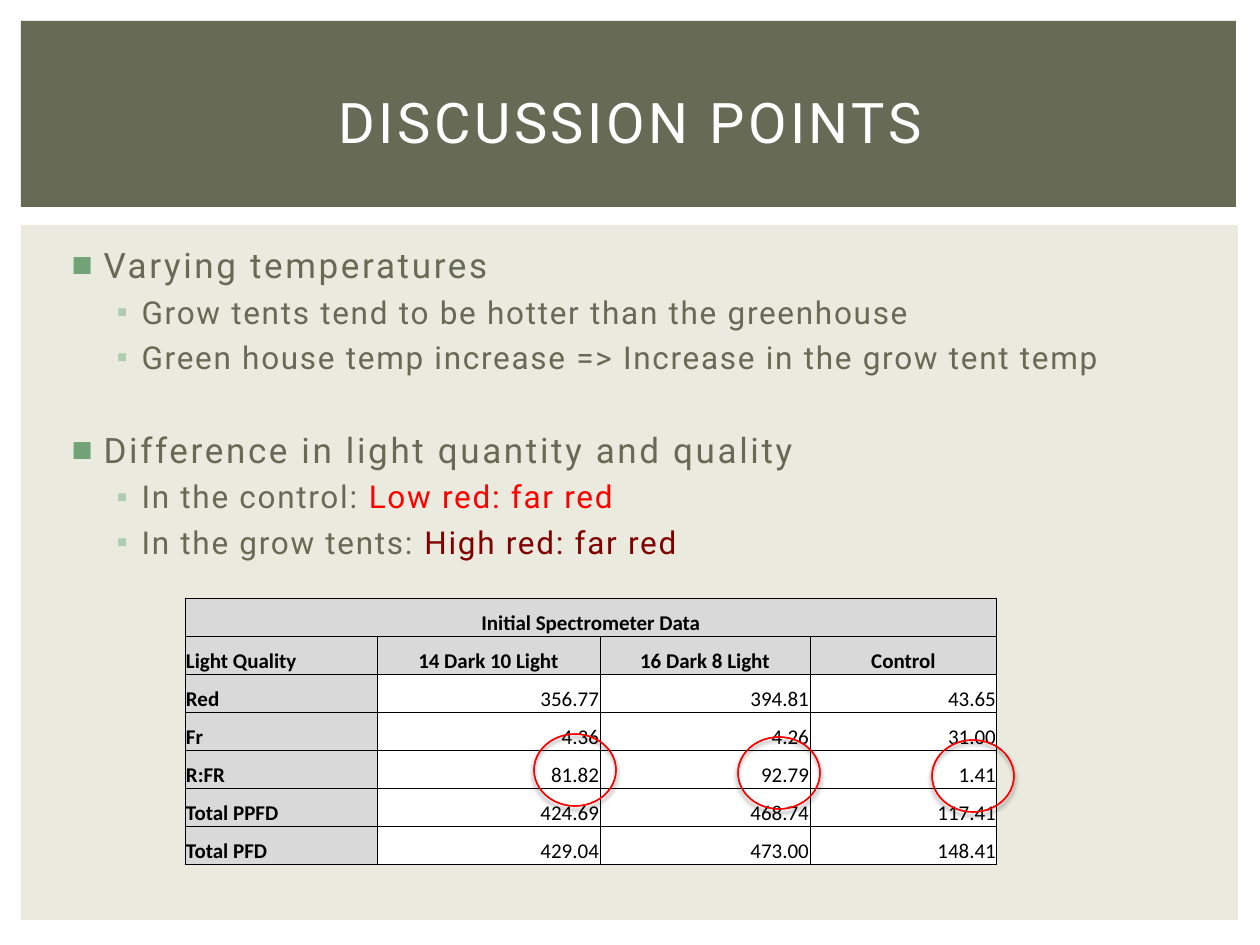
from lxml import etree
from pptx import Presentation
from pptx.dml.color import RGBColor
from pptx.enum.shapes import MSO_SHAPE
from pptx.enum.text import MSO_ANCHOR, MSO_AUTO_SIZE, PP_ALIGN
from pptx.oxml.ns import qn
from pptx.util import Emu, Pt

RECT, DONUT = MSO_SHAPE.RECTANGLE, MSO_SHAPE.DONUT
LEFT, CENTER, RIGHT = PP_ALIGN.LEFT, PP_ALIGN.CENTER, PP_ALIGN.RIGHT
MIDDLE, BOTTOM = MSO_ANCHOR.MIDDLE, MSO_ANCHOR.BOTTOM
NO_FIT = MSO_AUTO_SIZE.NONE

PX_PER_INCH = 126
COLORS = {
    "olive": "676A55", "cream": "EAEBDE", "white": "FFFFFF", "black": "000000",
    "green": "72A376", "mint": "B0CCB0", "red": "FF0000", "maroon": "800000",
    "gray": "D9D9D9",
}
# Per outline level: size, letter spacing, left margin, indent, bullet, its colour
LEVELS = [
    (20, 1.5, 38, -32, "■", "green"),
    (18, 1, 76, -25, "▪", "mint"),
]
# Level, space before in points, runs
POINTS = [
    (0, 1.5, [("Varying temperatures", "olive")]),
    (1, 4.2, [("Grow tents tend to be hotter than the greenhouse", "olive")]),
    (1, 4.2, [("Green house temp increase => Increase in the grow tent temp", "olive")]),
    (0, 30, [("Difference in light quantity and quality", "olive")]),
    (1, 4.2, [("In the control: ", "olive"), ("Low red: far red", "red")]),
    (1, 4.2, [("In the grow tents: ", "olive"), ("High red: far red", "maroon")]),
]
TABLE_TITLE = "Initial Spectrometer Data"
TABLE_ROWS = [
    ["Light Quality", "14 Dark 10 Light", "16 Dark 8 Light", "Control"],
    ["Red", "356.77", "394.81", "43.65"],
    ["Fr", "4.36", "4.26", "31.00"],
    ["R:FR", "81.82", "92.79", "1.41"],
    ["Total PPFD", "424.69", "468.74", "117.41"],
    ["Total PFD", "429.04", "473.00", "148.41"],
]
COL_WIDTHS = [192, 223, 210, 187]
ROW_HEIGHT = 38
RING_OFFSETS = [(349, 136), (553, 139), (747, 142)]


def px(n):
    return Emu(round(n * 914400 / PX_PER_INCH))


def rgb(name):
    return RGBColor.from_string(COLORS[name])


def add_run(p, text, font, size, color, bold=False, spacing=0):
    r = p.add_run()
    r.text = text
    r.font.name, r.font.size, r.font.bold = font, Pt(size), bold
    r.font.color.rgb = rgb(color)
    if spacing:
        r.font._element.set("spc", str(int(spacing * 100)))


def place(sp, x, y, w, h):
    sp.left, sp.top, sp.width, sp.height = px(x), px(y), px(w), px(h)


def add_panel(s, x, y, w, h, color):
    sp = s.shapes.add_shape(RECT, px(x), px(y), px(w), px(h))
    sp.shadow.inherit = False
    sp.fill.solid()
    sp.fill.fore_color.rgb = rgb(color)
    sp.line.fill.background()
    s.shapes.element.insert(2, sp.element)  # behind the placeholders


def add_header(s, x, y, w, h):
    add_panel(s, x, y, w, h, "olive")
    title = s.shapes.title
    place(title, x + 32, y + 28, w - 60, h - 41)
    tf = title.text_frame
    tf.auto_size, tf.vertical_anchor = NO_FIT, MIDDLE
    p = tf.paragraphs[0]
    p.alignment = CENTER
    add_run(p, "DISCUSSION POINTS", "Roboto", 32, "white", spacing=2)


def set_bullet(p, margin, indent, char, color):
    ppr = p._p.get_or_add_pPr()
    ppr.set("marL", str(px(margin)))
    ppr.set("indent", str(px(indent)))
    clr = etree.SubElement(ppr, qn("a:buClr"))
    etree.SubElement(clr, qn("a:srgbClr"), val=COLORS[color])
    etree.SubElement(ppr, qn("a:buChar"), char=char)


def add_body(s, x, y, w, h):
    add_panel(s, x, y, w, h, "cream")
    body = s.placeholders[1]
    place(body, x + 32, y + 12, w - 59, h - 88)
    tf = body.text_frame
    tf.auto_size = NO_FIT
    for i, (level, before, runs) in enumerate(POINTS):
        p = tf.add_paragraph() if i else tf.paragraphs[0]
        size, spacing, *bullet = LEVELS[level]
        p.level, p.space_before = level, Pt(before)
        set_bullet(p, *bullet)
        for text, color in runs:
            add_run(p, text, "Roboto", size, color, spacing=spacing)


def format_cell(cell, text, fill, align, bold):
    cell.margin_left = cell.margin_right = cell.margin_top = px(1)
    cell.margin_bottom = 0
    cell.vertical_anchor = BOTTOM
    tcpr = cell._tc.get_or_add_tcPr()
    for side in ("lnL", "lnR", "lnT", "lnB"):
        ln = etree.SubElement(tcpr, qn(f"a:{side}"), w=str(Pt(0.5)))
        solid = etree.SubElement(ln, qn("a:solidFill"))
        etree.SubElement(solid, qn("a:srgbClr"), val=COLORS["black"])
    cell.fill.solid()
    cell.fill.fore_color.rgb = rgb(fill)
    p = cell.text_frame.paragraphs[0]
    p.alignment = align
    if text:
        add_run(p, text, "Calibri", 12, "black", bold)


def add_ring(s, x, y, w, h):
    sp = s.shapes.add_shape(DONUT, px(x), px(y), px(w), px(h))
    sp.adjustments[0] = 0
    sp.fill.solid()
    sp.fill.fore_color.rgb = rgb("green")
    sp.line.color.rgb = rgb("red")
    sp.line.width = Pt(0.79)
    # Soft shadow straight below
    sp.shadow.inherit = False
    effects = sp.element.spPr.find(qn("a:effectLst"))
    shadow = etree.SubElement(effects, qn("a:outerShdw"), blurRad=str(Pt(2.5)),
                              dist=str(Pt(2)), dir="5400000", rotWithShape="0")
    clr = etree.SubElement(shadow, qn("a:srgbClr"), val=COLORS["black"])
    etree.SubElement(clr, qn("a:alpha"), val="50000")


def add_spectrometer_table(s, x, y):
    rows = [[TABLE_TITLE, "", "", ""]] + TABLE_ROWS
    frame = s.shapes.add_table(len(rows), len(COL_WIDTHS), px(x), px(y),
                               px(sum(COL_WIDTHS)), px(ROW_HEIGHT * len(rows)))
    table = frame.table
    table.first_row = table.horz_banding = False
    for col, width in zip(table.columns, COL_WIDTHS):
        col.width = px(width)
    for i, texts in enumerate(rows):
        table.rows[i].height = px(ROW_HEIGHT)
        for j, text in enumerate(texts):
            heading = i < 2 or j == 0
            if i == 0 or (i == 1 and j > 0):
                align = CENTER
            else:
                align = LEFT if j == 0 else RIGHT
            format_cell(table.cell(i, j), text, "gray" if heading else "white",
                        align, heading)
    table.cell(0, 0).merge(table.cell(0, len(COL_WIDTHS) - 1))
    # Rings around the R:FR values
    for dx, dy in RING_OFFSETS:
        add_ring(s, x + dx, y + dy, 82, 72)


def main():
    prs = Presentation()
    prs.slide_width, prs.slide_height = px(1260), px(945)
    s = prs.slides.add_slide(prs.slide_layouts[1])
    add_header(s, 21, 21, 1215, 186)
    add_body(s, 21, 225, 1217, 695)
    add_spectrometer_table(s, 185, 598)
    prs.save("out.pptx")


if __name__ == "__main__":
    main()
